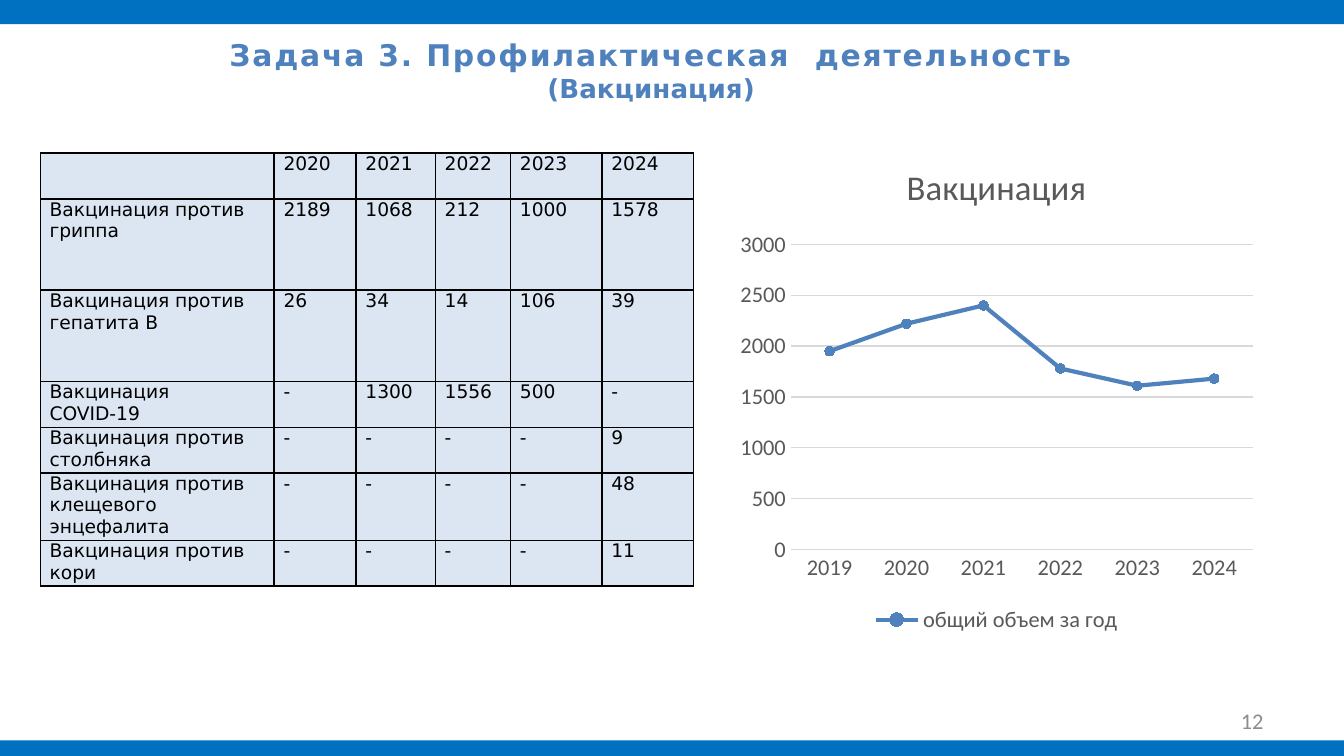
"""Builds the vaccination slide: a table by year beside a line chart of yearly totals."""
from lxml.etree import SubElement
from pptx import Presentation
from pptx.chart.data import CategoryChartData
from pptx.dml.color import RGBColor
from pptx.enum.chart import XL_CHART_TYPE, XL_LEGEND_POSITION, XL_MARKER_STYLE, XL_TICK_MARK
from pptx.enum.shapes import MSO_SHAPE
from pptx.enum.text import MSO_ANCHOR, MSO_AUTO_SIZE, PP_ALIGN
from pptx.oxml.ns import qn
from pptx.util import Inches, Pt

BAND_BLUE = RGBColor(0x00, 0x70, 0xC0)
ACCENT = RGBColor(0x4F, 0x81, 0xBD)
CELL_BLUE = RGBColor(0xDC, 0xE6, 0xF2)
BLACK = RGBColor(0x00, 0x00, 0x00)
LABEL_GRAY = RGBColor(0x59, 0x59, 0x59)
GRID_GRAY = RGBColor(0xD9, 0xD9, 0xD9)
NUMBER_GRAY = RGBColor(0x8C, 0x8C, 0x8C)
TEXT_FONT, CHART_FONT = "DejaVu Sans", "Calibri"

TITLE = [("Задача 3. Профилактическая  деятельность", 16, 100), ("(Вакцинация)", 14, 0)]
ROWS = [
    ("", "2020", "2021", "2022", "2023", "2024"),
    ("Вакцинация против гриппа", "2189", "1068", "212", "1000", "1578"),
    ("Вакцинация против гепатита В", "26", "34", "14", "106", "39"),
    ("Вакцинация COVID-19", "-", "1300", "1556", "500", "-"),
    ("Вакцинация против столбняка", "-", "-", "-", "-", "9"),
    ("Вакцинация против клещевого энцефалита", "-", "-", "-", "-", "48"),
    ("Вакцинация против кори", "-", "-", "-", "-", "11"),
]
COLUMN_WIDTHS = [1.74, 0.61, 0.59, 0.56, 0.68, 0.68]
ROW_HEIGHTS = [0.34, 0.68, 0.68, 0.34, 0.34, 0.34, 0.34]
CHART_TITLE, SERIES_NAME = "Вакцинация", "общий объем за год"
TOTALS = {"2019": 1950, "2020": 2220, "2021": 2400, "2022": 1780, "2023": 1610, "2024": 1680}
PAGE_NUMBER = "12"


def style(font, name, size, color, bold=False):
    font.name, font.size, font.bold = name, Pt(size), bold
    font.color.rgb = color


def add_span(para, text, *look):
    span = para.add_run()
    span.text = text
    style(span.font, *look)
    return span


def add_band(page, top):
    band = page.shapes.add_shape(MSO_SHAPE.RECTANGLE, 0, Inches(top), Inches(10), Inches(0.18))
    band.shadow.inherit = False
    band.fill.solid()
    band.fill.fore_color.rgb = BAND_BLUE
    band.line.fill.background()


def add_title(page):
    box = page.shapes.title
    box.left, box.top, box.width, box.height = map(Inches, (0.74, 0.22, 8.21, 0.61))
    frame = box.text_frame
    frame.word_wrap = True
    frame.auto_size = MSO_AUTO_SIZE.SHAPE_TO_FIT_TEXT
    frame.vertical_anchor = MSO_ANCHOR.TOP
    for index, (text, size, spacing) in enumerate(TITLE):
        para = frame.add_paragraph() if index else frame.paragraphs[0]
        para.alignment = PP_ALIGN.CENTER
        para.space_before = Pt(0)
        span = add_span(para, text, TEXT_FONT, size, ACCENT, True)
        span.font._element.set("spc", str(spacing))


def add_borders(cell):
    properties = cell._tc.get_or_add_tcPr()
    for side in ("lnL", "lnR", "lnT", "lnB"):
        line = SubElement(properties, qn(f"a:{side}"), w=str(Pt(1)))
        fill = SubElement(line, qn("a:solidFill"))
        SubElement(fill, qn("a:srgbClr"), val=str(BLACK))


def add_vaccination_table(page):
    table = page.shapes.add_table(
        len(ROWS), len(COLUMN_WIDTHS), Inches(0.3), Inches(1.14),
        Inches(sum(COLUMN_WIDTHS)), Inches(sum(ROW_HEIGHTS))).table
    table.first_row = table.horz_banding = False
    for column, width in zip(table.columns, COLUMN_WIDTHS):
        column.width = Inches(width)
    for row, height, values in zip(table.rows, ROW_HEIGHTS, ROWS):
        row.height = Inches(height)
        for cell, text in zip(row.cells, values):
            cell.margin_left = cell.margin_right = Inches(0.07)
            cell.margin_top = cell.margin_bottom = 0
            add_borders(cell)
            cell.fill.solid()
            cell.fill.fore_color.rgb = CELL_BLUE
            if text:
                add_span(cell.text_frame.paragraphs[0], text, TEXT_FONT, 10, BLACK)


def paint_line(line, color, width):
    line.color.rgb = color
    line.width = Pt(width)


def add_totals_chart(page):
    data = CategoryChartData()
    data.categories = list(TOTALS)
    data.add_series(SERIES_NAME, list(TOTALS.values()))
    chart = page.shapes.add_chart(
        XL_CHART_TYPE.LINE_MARKERS, Inches(5.43), Inches(1.04), Inches(3.97), Inches(3.71), data).chart
    style(chart.font, CHART_FONT, 10, BLACK)
    chart.has_title = True
    add_span(chart.chart_title.text_frame.paragraphs[0], CHART_TITLE, CHART_FONT, 18.6, LABEL_GRAY)
    chart.chart_title.include_in_layout = False
    chart.has_legend = True
    chart.legend.position = XL_LEGEND_POSITION.BOTTOM
    chart.legend.include_in_layout = False
    style(chart.legend.font, CHART_FONT, 12, LABEL_GRAY)

    years, amounts = chart.category_axis, chart.value_axis
    for axis in (years, amounts):
        axis.major_tick_mark = axis.minor_tick_mark = XL_TICK_MARK.NONE
        style(axis.tick_labels.font, CHART_FONT, 12, LABEL_GRAY)
    paint_line(years.format.line, GRID_GRAY, 0.75)
    amounts.minimum_scale, amounts.maximum_scale, amounts.major_unit = 0, 3000, 500
    amounts.format.line.fill.background()
    paint_line(amounts.major_gridlines.format.line, GRID_GRAY, 0.75)

    plot = chart.plots[0]
    plot.vary_by_categories = False
    series = plot.series[0]
    series.smooth = False
    paint_line(series.format.line, ACCENT, 2.25)
    series.marker.style, series.marker.size = XL_MARKER_STYLE.CIRCLE, 5
    series.marker.format.fill.solid()
    series.marker.format.fill.fore_color.rgb = ACCENT
    paint_line(series.marker.format.line, ACCENT, 0.75)


def add_page_number(page):
    box = page.shapes.add_textbox(Inches(7.17), Inches(5.21), Inches(2.33), Inches(0.3))
    frame = box.text_frame
    frame.word_wrap = True
    frame.vertical_anchor = MSO_ANCHOR.MIDDLE
    para = frame.paragraphs[0]
    para.alignment = PP_ALIGN.RIGHT
    add_span(para, PAGE_NUMBER, CHART_FONT, 12, NUMBER_GRAY)


def main():
    deck = Presentation()
    deck.slide_width, deck.slide_height = Inches(10), Inches(10 * 9 / 16)
    page = deck.slides.add_slide(deck.slide_layouts[5])
    for top in (0, 5.51):
        add_band(page, top)
    add_title(page)
    add_totals_chart(page)
    add_page_number(page)
    add_vaccination_table(page)
    deck.save("out.pptx")


if __name__ == "__main__":
    main()
